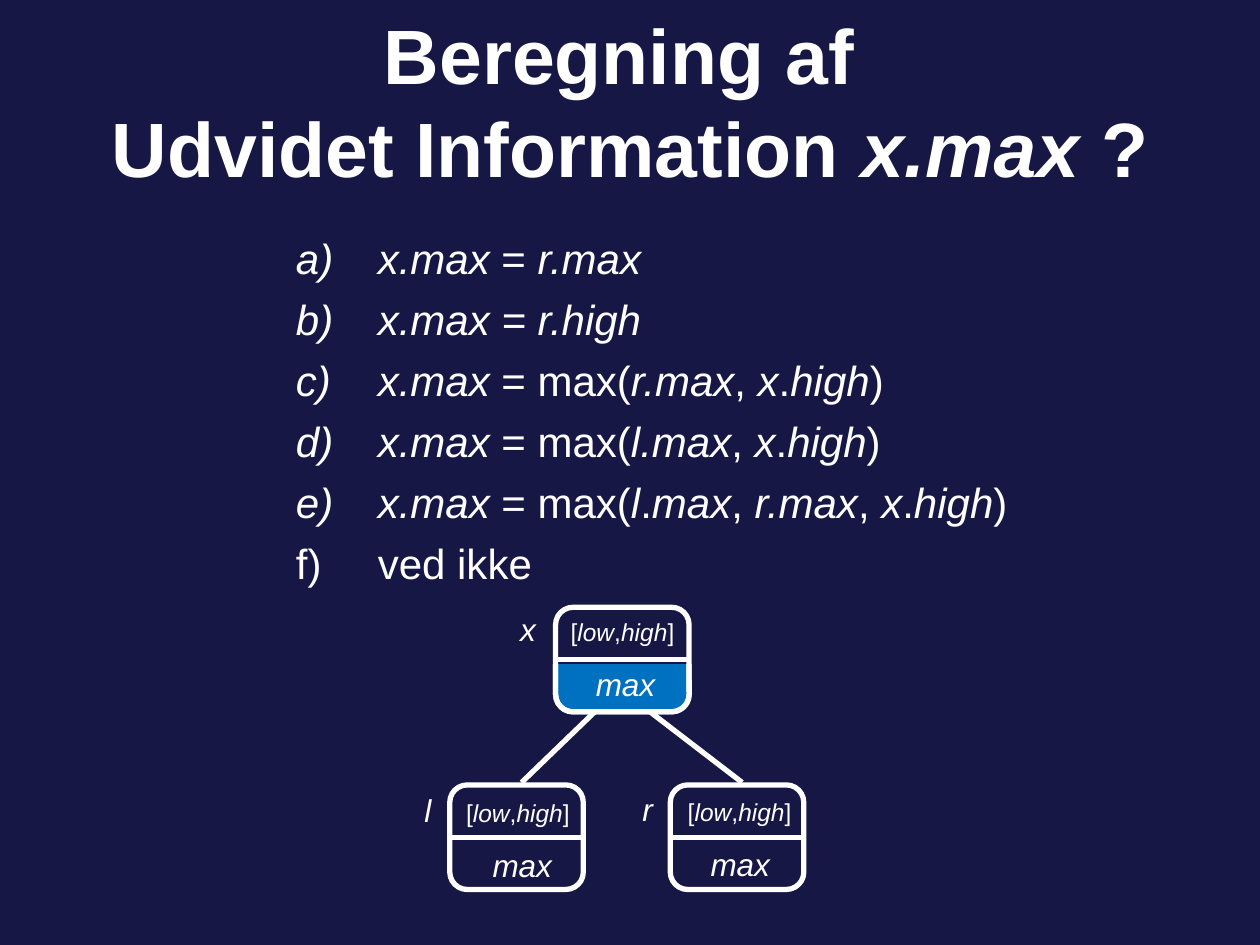
from lxml.etree import SubElement
from pptx import Presentation
from pptx.dml.color import RGBColor
from pptx.enum.shapes import MSO_CONNECTOR, MSO_SHAPE
from pptx.enum.text import MSO_ANCHOR, MSO_AUTO_SIZE, PP_ALIGN
from pptx.oxml.ns import qn
from pptx.util import Inches, Pt

COLORS = {"background": "171745", "highlight": "0070C0", "ink": "FFFFFF"}
FONT = "Arial"
NODE_WIDTH, NODE_HEIGHT = 1.06, 0.83
# Asterisks enclose italic passages.
ANSWERS = [
    "*x.max* = *r.max*",
    "*x.max = r.high*",
    "*x.max* = max(*r.max*, *x*.*high*)",
    "*x.max* = max(*l.max*, *x*.*high*)",
    "*x.max* = max(*l*.*max*, *r.max*, *x*.*high*)",
    "ved ikke",
]


def rgb(name):
    """Look up a named colour."""
    return RGBColor.from_string(COLORS[name])


def style(font, size):
    """Give a font the slide's face and colour."""
    font.name, font.size = FONT, Pt(size)
    font.color.rgb = rgb("ink")


def add_marked_runs(paragraph, marked, size=None):
    """Add runs, italic where the text stands between asterisks."""
    for index, part in enumerate(marked.split("*")):
        if part:
            run = paragraph.add_run()
            run.text = part
            run.font.italic = index % 2 == 1
            if size:
                run.font.size = Pt(size)


def add_text_frame(slide, left, top, width, height):
    """Add a wrapping text box and return its frame."""
    box = slide.shapes.add_textbox(Inches(left), Inches(top), Inches(width), Inches(height))
    box.text_frame.word_wrap = True
    return box.text_frame


def add_title(slide):
    """Fill and place the title."""
    title = slide.shapes.title
    title.left, title.top = Inches(0), Inches(0.17)
    title.width, title.height = Inches(10), Inches(1.25)
    frame = title.text_frame
    frame.auto_size = MSO_AUTO_SIZE.NONE
    frame.vertical_anchor = MSO_ANCHOR.MIDDLE
    heading = frame.paragraphs[0]
    heading.alignment = PP_ALIGN.CENTER
    style(heading.font, 44)
    heading.font.bold = True
    add_marked_runs(heading, "Beregning af ")
    heading.add_line_break()
    add_marked_runs(heading, "Udvidet Information *x.max *?")


def add_answers(slide):
    """Add the lettered answer list."""
    frame = add_text_frame(slide, 2.25, 1.8, 5.92, 2.5)
    for index, answer in enumerate(ANSWERS):
        paragraph = frame.add_paragraph() if index else frame.paragraphs[0]
        paragraph.space_before = Pt(6)
        style(paragraph.font, 24)
        add_marked_runs(paragraph, answer)
        properties = paragraph._p.get_or_add_pPr()
        properties.set("marL", str(Inches(0.65)))
        properties.set("indent", str(-Inches(0.65)))
        numbering = properties.makeelement(qn("a:buAutoNum"), {"type": "alphaLcParenR"})
        properties.find(qn("a:defRPr")).addprevious(numbering)


def add_block(slide, shape_kind, left, top, width, height, fill=None, outlined=True):
    """Add a preset shape with an optional fill and outline."""
    block = slide.shapes.add_shape(
        shape_kind, Inches(left), Inches(top), Inches(width), Inches(height))
    block.shadow.inherit = False
    if fill:
        block.fill.solid()
        block.fill.fore_color.rgb = rgb(fill)
    else:
        block.fill.background()
    if outlined:
        block.line.color.rgb = rgb("ink")
        block.line.width = Pt(3)
    else:
        block.line.fill.background()


def add_line(slide, x1, y1, x2, y2):
    """Add a straight line of the tree."""
    line = slide.shapes.add_connector(
        MSO_CONNECTOR.STRAIGHT, Inches(x1), Inches(y1), Inches(x2), Inches(y2))
    line.line.color.rgb = rgb("ink")
    line.line.width = Pt(3)
    SubElement(line._element.spPr, qn("a:effectLst"))


def add_node(slide, label, left, top, text_left, text_top, text_width, tab):
    """Add a tree node with its label, interval and max field."""
    frame = add_text_frame(slide, text_left, text_top, text_width, 0.86)
    interval = frame.paragraphs[0]
    style(interval.font, 18)
    add_marked_runs(interval, f"*{label}\t*")
    add_marked_runs(interval, "[*low*,*high*]", 14)
    tabs = interval._p.pPr.makeelement(qn("a:tabLst"), {})
    SubElement(tabs, qn("a:tab"), {"pos": str(Inches(tab)), "algn": "l"})
    interval._p.pPr.find(qn("a:defRPr")).addprevious(tabs)

    maximum = frame.add_paragraph()
    maximum.alignment = PP_ALIGN.CENTER
    maximum.space_before = Pt(10)
    style(maximum.font, 18)
    add_marked_runs(maximum, "*max*")

    middle = top + NODE_HEIGHT / 2
    add_line(slide, left, middle, left + NODE_WIDTH, middle)
    add_block(slide, MSO_SHAPE.ROUNDED_RECTANGLE, left, top, NODE_WIDTH, NODE_HEIGHT)


def add_tree(slide):
    """Add the three nodes, the highlighted max field and the edges."""
    add_block(slide, MSO_SHAPE.ROUNDED_RECTANGLE, 4.41, 4.82,
              NODE_WIDTH, NODE_HEIGHT, "highlight")
    add_block(slide, MSO_SHAPE.RECTANGLE, 4.33, 4.6, 2.58, 0.67, "background", False)
    add_node(slide, "x", 4.41, 4.82, 4.03, 4.79, 1.87, 0.4)
    add_node(slide, "l", 3.57, 6.23, 3.27, 6.23, 1.75, 0.33)
    add_node(slide, "r", 5.32, 6.23, 5, 6.22, 1.75, 0.36)
    add_line(slide, 4.72, 5.65, 4.14, 6.21)
    add_line(slide, 5.16, 5.65, 5.89, 6.21)


def main():
    """Build and save the slide."""
    deck = Presentation()
    deck.slide_width, deck.slide_height = Inches(10), Inches(7.5)
    slide = deck.slides.add_slide(deck.slide_layouts[5])
    slide.background.fill.solid()
    slide.background.fill.fore_color.rgb = rgb("background")
    add_title(slide)
    add_answers(slide)
    add_tree(slide)
    deck.save("out.pptx")


if __name__ == "__main__":
    main()
